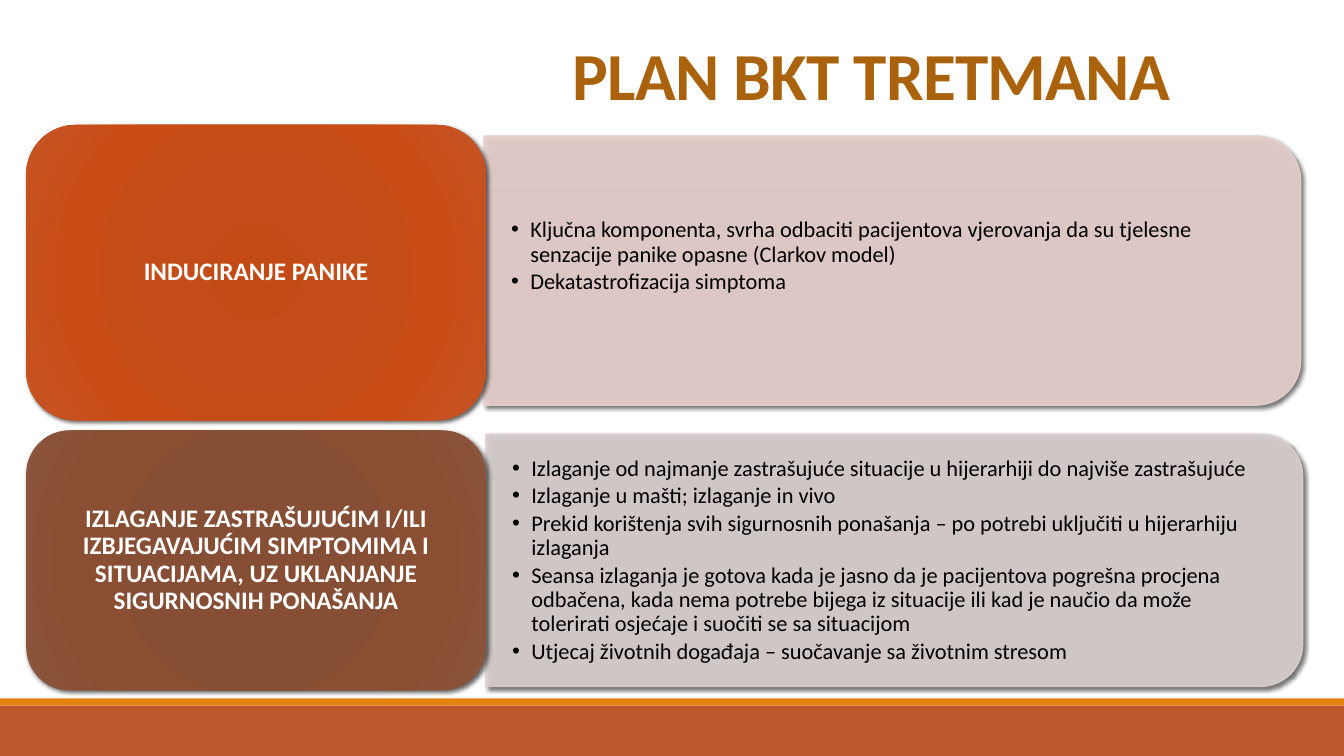
from dataclasses import dataclass

from lxml.etree import SubElement
from pptx import Presentation
from pptx.dml.color import RGBColor as RGB
from pptx.enum.shapes import MSO_CONNECTOR as CONN, MSO_SHAPE as SHAPE
from pptx.enum.text import MSO_ANCHOR as ANCHOR, MSO_AUTO_SIZE as AUTO, PP_ALIGN as ALIGN
from pptx.oxml.ns import qn
from pptx.util import Inches, Pt


@dataclass(frozen=True)
class Theme:
    font: str = "Calibri"
    title: str = "AB620D"
    text: str = "000000"
    label: str = "FFFFFF"
    rule: str = "808080"
    band: str = "BD582C"
    stripe: str = "E48312"
    title_size: int = 48
    label_size: int = 18
    list_size: int = 16
    stops: tuple = (0, 34, 70, 100)


def apply(obj, values):
    for name, value in values.items():
        setattr(obj, name, value)


def child(parent, tag, **attrs):
    return SubElement(parent, qn(tag), {k: str(v) for k, v in attrs.items()})


class Deck:
    def __init__(self, theme):
        self.t = theme
        self.prs = Presentation()
        apply(self.prs, {"slide_width": Inches(13.33), "slide_height": Inches(7.5)})
        self.s = self.prs.slides.add_slide(self.prs.slide_layouts[3])

    def place(self, sp, box):
        apply(sp, dict(zip(("left", "top", "width", "height"), map(Inches, box))))

    def frame(self, tf, anchor, inset_x, inset_y):
        x, y = Inches(inset_x), Inches(inset_y)
        apply(tf, {"word_wrap": True, "auto_size": AUTO.NONE, "vertical_anchor": anchor,
                   "margin_left": x, "margin_right": x, "margin_top": y, "margin_bottom": y})

    def add_text(self, p, text, size, color, bold=False, **layout):
        apply(p, {"line_spacing": 0.9, "space_before": Pt(0), "space_after": Pt(0), **layout})
        r = p.add_run()
        r.text = text
        apply(r.font, {"name": self.t.font, "size": Pt(size), "bold": bold})
        r.font.color.rgb = RGB.from_string(color)
        return r

    def shape(self, kind, box, color):
        sp = self.s.shapes.add_shape(kind, *map(Inches, box))
        sp.shadow.inherit = False
        sp.fill.solid()
        sp.fill.fore_color.rgb = RGB.from_string(color)
        sp.line.fill.background()
        return sp

    def shadow(self, sp):
        effects = sp._element.spPr.find(qn("a:effectLst"))
        outer = child(effects, "a:outerShdw", blurRad=Pt(3), dist=Pt(2),
                      dir=45 * 60000, rotWithShape=0)
        child(child(outer, "a:srgbClr", val="000000"), "a:alpha", val=60000)

    def rule(self, x1, x2, y):
        c = self.s.shapes.add_connector(CONN.STRAIGHT, *map(Inches, (x1, y, x2, y)))
        c.line.width = Pt(0.5)
        c.line.color.rgb = RGB.from_string(self.t.rule)
        child(c._element.spPr, "a:effectLst")

    def title(self, text, box):
        sp = self.s.shapes.title
        self.place(sp, box)
        self.frame(sp.text_frame, ANCHOR.BOTTOM, 0.1, 0.05)
        r = self.add_text(sp.text_frame.paragraphs[0], text, self.t.title_size, self.t.title,
                          bold=True, line_spacing=0.85, alignment=ALIGN.LEFT)
        r.font._element.set("spc", "-50")

    def panel(self, box, color):
        x, y, w, h = box
        turned = (x + (w - h) / 2, y + (h - w) / 2, h, w)
        sp = self.shape(SHAPE.ROUND_2_SAME_RECTANGLE, turned, color)
        sp.rotation = 90
        sp.line.width = Pt(1)
        sp.line.color.rgb = RGB.from_string(color)
        for clr in sp._element.spPr.iter(qn("a:srgbClr")):
            child(clr, "a:alpha", val=90000)
        self.shadow(sp)

    def bullets(self, index, items, box):
        sp = self.s.placeholders[index]
        self.s.shapes._spTree.append(sp._element)
        self.place(sp, box)
        tf = sp.text_frame
        self.frame(tf, ANCHOR.MIDDLE, 0.27, 0.14)
        for i, text in enumerate(items):
            p = tf.add_paragraph() if i else tf.paragraphs[0]
            self.add_text(p, text, self.t.list_size, self.t.text, level=1,
                          alignment=ALIGN.LEFT, space_after=Pt(2.4))
            pPr = p._p.get_or_add_pPr()
            pPr.set("marL", str(Inches(0.19)))
            pPr.set("indent", str(-Inches(0.19)))
            child(pPr, "a:buFont", typeface="Arial")
            child(pPr, "a:buChar", char="•")

    def label(self, text, box, colors):
        sp = self.shape(SHAPE.ROUNDED_RECTANGLE, box, colors[0])
        spPr = sp._element.spPr
        grad = child(spPr, "a:gradFill", rotWithShape=1)
        stops = child(grad, "a:gsLst")
        for pos, color in zip(self.t.stops, colors):
            child(child(stops, "a:gs", pos=pos * 1000), "a:srgbClr", val=color)
        child(child(grad, "a:path", path="circle"), "a:fillToRect",
              **dict.fromkeys("ltrb", 100000))
        spPr.replace(spPr.find(qn("a:solidFill")), grad)
        self.shadow(sp)
        self.frame(sp.text_frame, ANCHOR.MIDDLE, 0.21, 0.17)
        self.add_text(sp.text_frame.paragraphs[0], text, self.t.label_size, self.t.label,
                      bold=True, alignment=ALIGN.CENTER)


ROWS = [
    {
        "label": "INDUCIRANJE PANIKE",
        "label_box": (0.26, 1.24, 4.56, 2.93),
        "gradient": ("C44A15", "C34C18", "C94C15", "C45525"),
        "panel_box": (4.8, 1.35, 8.1, 2.67),
        "panel": "E8D1CD",
        "list_box": (4.8, 1.48, 7.97, 2.13),
        "items": [
            "Ključna komponenta, svrha odbaciti pacijentova vjerovanja da su tjelesne "
            "senzacije panike opasne (Clarkov model)",
            "Dekatastrofizacija simptoma",
        ],
    },
    {
        "label": "IZLAGANJE ZASTRAŠUJUĆIM I/ILI IZBJEGAVAJUĆIM SIMPTOMIMA I SITUACIJAMA, "
                 "UZ UKLANJANJE SIGURNOSNIH PONAŠANJA",
        "label_box": (0.26, 4.27, 4.56, 2.58),
        "gradient": ("874C32", "864E34", "8A4E33", "8A553C"),
        "panel_box": (4.82, 4.31, 8.1, 2.5),
        "panel": "D9D1CF",
        "list_box": (4.81, 4.43, 7.98, 2.26),
        "items": [
            "Izlaganje od najmanje zastrašujuće situacije u hijerarhiji do najviše zastrašujuće",
            "Izlaganje u mašti; izlaganje in vivo",
            "Prekid korištenja svih sigurnosnih ponašanja – po potrebi uključiti u hijerarhiju "
            "izlaganja",
            "Seansa izlaganja je gotova kada je jasno da je pacijentova pogrešna procjena "
            "odbačena, kada nema potrebe bijega iz situacije ili kad je naučio da može "
            "tolerirati osjećaje i suočiti se sa situacijom",
            "Utjecaj životnih događaja – suočavanje sa životnim stresom",
        ],
    },
]


def main():
    theme = Theme()
    deck = Deck(theme)
    deck.shape(SHAPE.RECTANGLE, (0, 7, 13.33, 0.5), theme.band)
    deck.shape(SHAPE.RECTANGLE, (0, 6.93, 13.33, 0.07), theme.stripe)
    deck.rule(1.31, 12.21, 1.9)
    deck.title("PLAN BKT TRETMANA", (5.58, 0.12, 6.15, 1.06))
    for index, row in enumerate(ROWS, 1):
        deck.panel(row["panel_box"], row["panel"])
        deck.bullets(index, row["items"], row["list_box"])
        deck.label(row["label"], row["label_box"], row["gradient"])
    deck.prs.save("out.pptx")


if __name__ == "__main__":
    main()
